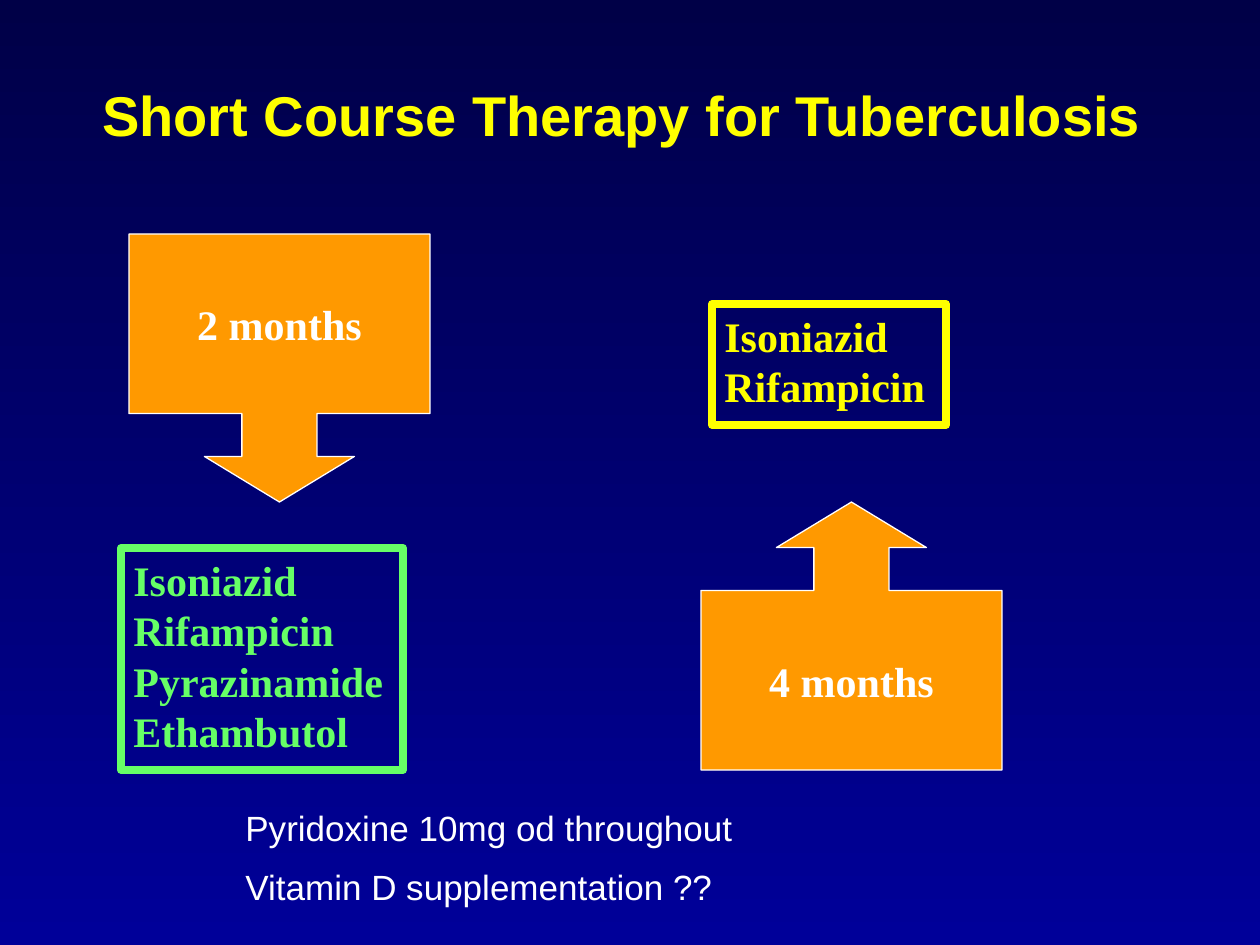
import pptx
import pptx.dml.color
import pptx.enum.shapes
import pptx.enum.text
import pptx.oxml
import pptx.oxml.ns
import pptx.util

EMU_PER_PX = 914400 / 126
SHAPES = pptx.enum.shapes.MSO_SHAPE
ANCHOR = pptx.enum.text.MSO_ANCHOR
ALIGN = pptx.enum.text.PP_ALIGN
WHITE, YELLOW, GREEN, ORANGE = "FFFFFF", "FFFF00", "66FF66", "FF9900"


def px(length):
    return pptx.util.Emu(round(length * EMU_PER_PX))


def color(hex_string):
    return pptx.dml.color.RGBColor.from_string(hex_string)


def write(frame, lines, *, font, size, ink, bold=False, align=ALIGN.LEFT,
          anchor=ANCHOR.TOP, wrap=True, grow=False, space_before=None):
    frame.word_wrap = wrap
    frame.vertical_anchor = anchor
    auto = pptx.enum.text.MSO_AUTO_SIZE
    frame.auto_size = auto.SHAPE_TO_FIT_TEXT if grow else auto.NONE
    for index, line in enumerate(lines):
        paragraph = frame.paragraphs[0] if index == 0 else frame.add_paragraph()
        paragraph.alignment = align
        if space_before:
            paragraph._p.get_or_add_pPr().append(pptx.oxml.parse_xml(
                f'<a:spcBef {pptx.oxml.ns.nsdecls("a")}>'
                f'<a:spcPct val="{space_before * 1000}"/></a:spcBef>'))
        run = paragraph.add_run()
        run.text = line
        run.font.name = font
        run.font.size = pptx.util.Pt(size)
        run.font.bold = bold
        run.font.color.rgb = color(ink)


class TherapySlide:
    heading_font = "Arial"
    drug_font = "Times New Roman"
    drug_size = 24
    callout_size = (301, 268)
    callout_adjustments = (0.28, 0.28, 0.17, 0.67)

    def __init__(self, deck):
        self.slide = deck.slides.add_slide(deck.slide_layouts[6])

    def background(self, top, bottom):
        fill = self.slide.background.fill
        fill.gradient()
        fill.gradient_angle = 270
        for stop, shade in zip(fill.gradient_stops, (top, bottom)):
            stop.color.rgb = color(shade)

    def text(self, box, lines, **style):
        area = self.slide.shapes.add_textbox(*map(px, box))
        write(area.text_frame, lines, font=self.heading_font, **style)

    def outlined(self, preset, box, line, width):
        shape = self.slide.shapes.add_shape(preset, *map(px, box))
        shape.shadow.inherit = False
        shape.line.color.rgb = color(line)
        shape.line.width = pptx.util.Pt(width)
        return shape

    def drug_box(self, box, drugs, ink):
        frame = self.outlined(SHAPES.RECTANGLE, box, ink, 4.5)
        frame.fill.background()
        write(frame.text_frame, drugs, font=self.drug_font, size=self.drug_size,
              ink=ink, bold=True, wrap=False, grow=True)

    def duration(self, preset, left, top, label):
        callout = self.outlined(preset, (left, top, *self.callout_size), WHITE, 0.75)
        callout.fill.solid()
        callout.fill.fore_color.rgb = color(ORANGE)
        for index, value in enumerate(self.callout_adjustments):
            callout.adjustments[index] = value
        write(callout.text_frame, [label], font=self.drug_font, size=self.drug_size,
              ink=WHITE, bold=True, align=ALIGN.CENTER, anchor=ANCHOR.MIDDLE, wrap=False)


def main():
    deck = pptx.Presentation()
    deck.slide_width, deck.slide_height = px(1260), px(945)
    therapy = TherapySlide(deck)
    therapy.background("000047", "000099")
    therapy.text((20, 35, 1204, 158), ["Short Course Therapy for Tuberculosis"],
                 size=32, ink=YELLOW, bold=True, align=ALIGN.CENTER, anchor=ANCHOR.MIDDLE)

    continuation = ["Isoniazid", "Rifampicin"]
    initial = continuation + ["Pyrazinamide", "Ethambutol"]
    therapy.drug_box((121, 548, 282, 222), initial, GREEN)
    therapy.drug_box((712, 304, 234, 121), continuation, YELLOW)
    therapy.duration(SHAPES.UP_ARROW_CALLOUT, 701, 502, "4 months")
    therapy.duration(SHAPES.DOWN_ARROW_CALLOUT, 129, 234, "2 months")

    therapy.text((233, 800, 665, 117),
                 ["Pyridoxine 10mg od throughout", "Vitamin D supplementation ??"],
                 size=20, ink=WHITE, grow=True, space_before=50)
    deck.save("out.pptx")


if __name__ == "__main__":
    main()
